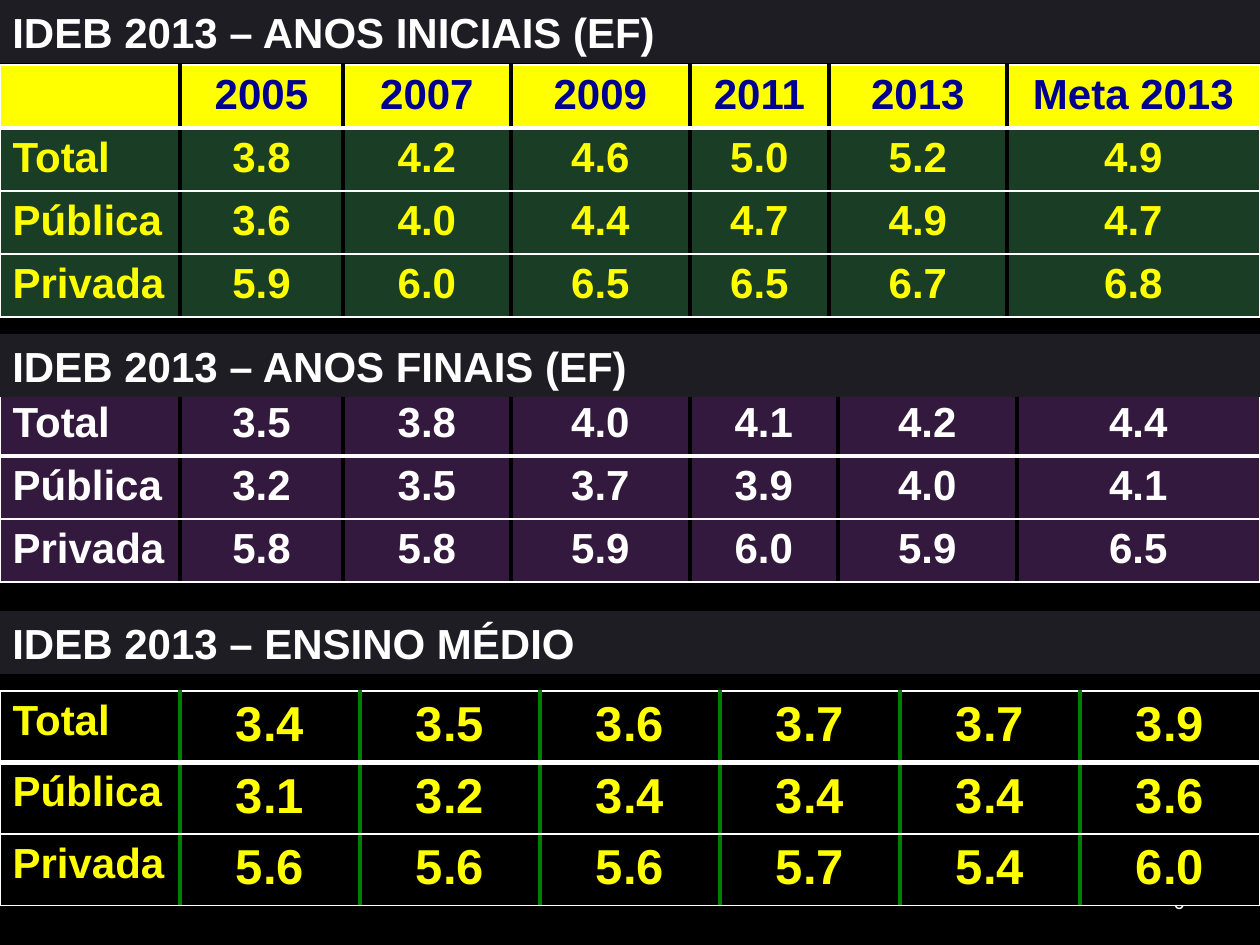
import pptx
import pptx.dml.color
import pptx.enum.shapes
import pptx.enum.text
import pptx.oxml
import pptx.oxml.ns
import pptx.util

RGBColor = pptx.dml.color.RGBColor
PP_ALIGN = pptx.enum.text.PP_ALIGN
ANCHOR = pptx.enum.text.MSO_ANCHOR

BLACK = RGBColor(0x00, 0x00, 0x00)
WHITE = RGBColor(0xFF, 0xFF, 0xFF)
YELLOW = RGBColor(0xFF, 0xFF, 0x00)
NAVY = RGBColor(0x00, 0x00, 0x90)
GREEN = RGBColor(0x00, 0x80, 0x00)
DARK_GREEN = RGBColor(0x1A, 0x3E, 0x25)
PURPLE = RGBColor(0x34, 0x19, 0x3F)
BAR_GREY = RGBColor(0x1F, 0x1D, 0x24)

PX = 914400 // 126
WIDTH, HEIGHT = 1260, 945
BAR_HEIGHT = 63
THIN, THICK = 1, 3

YEARS = ["", "2005", "2007", "2009", "2011", "2013", "Meta 2013"]
INITIAL_YEARS = [
    ["Total", "3.8", "4.2", "4.6", "5.0", "5.2", "4.9"],
    ["Pública", "3.6", "4.0", "4.4", "4.7", "4.9", "4.7"],
    ["Privada", "5.9", "6.0", "6.5", "6.5", "6.7", "6.8"],
]
FINAL_YEARS = [
    ["Total", "3.5", "3.8", "4.0", "4.1", "4.2", "4.4"],
    ["Pública", "3.2", "3.5", "3.7", "3.9", "4.0", "4.1"],
    ["Privada", "5.8", "5.8", "5.9", "6.0", "5.9", "6.5"],
]
HIGH_SCHOOL = [
    ["Total", "3.4", "3.5", "3.6", "3.7", "3.7", "3.9"],
    ["Pública", "3.1", "3.2", "3.4", "3.4", "3.4", "3.6"],
    ["Privada", "5.6", "5.6", "5.6", "5.7", "5.4", "6.0"],
]


def emu(*lengths):
    return [pptx.util.Emu(length * PX) for length in lengths]


def write(frame, text, size, color, align, font="Arial", bold=True):
    frame.text = text
    paragraph = frame.paragraphs[0]
    paragraph.alignment = align
    for run in paragraph.runs:
        run.font.name = font
        run.font.size = pptx.util.Pt(size)
        run.font.bold = bold
        run.font.color.rgb = color


def set_borders(cell, edges):
    """Draw the (colour, points) edges, given as left, right, top, bottom."""
    properties = cell._tc.get_or_add_tcPr()
    for place, (side, (color, points)) in enumerate(zip("LRTB", edges)):
        line = pptx.oxml.parse_xml(
            f'<a:ln{side} {pptx.oxml.ns.nsdecls("a")} w="{pptx.util.Pt(points)}">'
            f'<a:solidFill><a:srgbClr val="{color}"/></a:solidFill></a:ln{side}>'
        )
        properties.insert(place, line)


def add_heading_bar(slide, top, text):
    bar = slide.shapes.add_shape(
        pptx.enum.shapes.MSO_SHAPE.RECTANGLE, *emu(0, top, WIDTH, BAR_HEIGHT)
    )
    bar.shadow.inherit = False
    bar.fill.solid()
    bar.fill.fore_color.rgb = BAR_GREY
    bar.line.fill.background()
    bar.text_frame.vertical_anchor = ANCHOR.TOP
    write(bar.text_frame, text, 24, WHITE, PP_ALIGN.LEFT)


def add_score_table(slide, top, rows, widths, row_height, fill, color,
                    divider=BLACK, score_size=24, has_header=False):
    grid = slide.shapes.add_table(
        len(rows), len(widths), *emu(0, top, sum(widths), row_height * len(rows))
    ).table
    grid.first_row = grid.horz_banding = False
    for column, width in zip(grid.columns, widths):
        column.width = emu(width)[0]

    inner, outer = (divider, THICK), (WHITE, THIN)
    for r, values in enumerate(rows):
        grid.rows[r].height = emu(row_height)[0]
        is_header = has_header and r == 0
        for c, value in enumerate(values):
            cell = grid.cell(r, c)
            cell.fill.solid()
            cell.fill.fore_color.rgb = YELLOW if is_header else fill
            write(
                cell.text_frame, value,
                score_size if c else 24,
                NAVY if is_header else color,
                PP_ALIGN.CENTER if c else PP_ALIGN.LEFT,
            )
            set_borders(cell, [
                inner if c else outer,
                inner if c < len(widths) - 1 else outer,
                (WHITE, THICK if r == 1 else THIN),
                (WHITE, THICK if r == 0 else THIN),
            ])


def add_page_number(slide, left, top, width, height):
    number = slide.shapes.add_textbox(*emu(left, top, width, height)).text_frame
    number.word_wrap = True
    number.vertical_anchor = ANCHOR.MIDDLE
    write(number, "6", 12, WHITE, PP_ALIGN.RIGHT, font="Calibri", bold=False)


def main():
    deck = pptx.Presentation()
    deck.slide_width, deck.slide_height = emu(WIDTH, HEIGHT)
    slide = deck.slides.add_slide(deck.slide_layouts[6])
    slide.background.fill.solid()
    slide.background.fill.fore_color.rgb = BLACK

    add_page_number(slide, 903, 876, 294, 50)

    add_score_table(slide, 65, [YEARS] + INITIAL_YEARS,
                    [180, 163, 168, 179, 139, 178, 253], 63,
                    DARK_GREEN, YELLOW, has_header=True)
    add_heading_bar(slide, 0, "IDEB 2013 – ANOS INICIAIS (EF)")

    add_score_table(slide, 393, FINAL_YEARS,
                    [180, 163, 168, 179, 148, 179, 243], 63, PURPLE, WHITE)
    add_heading_bar(slide, 334, "IDEB 2013 – ANOS FINAIS (EF)")

    add_score_table(slide, 691, HIGH_SCHOOL, [WIDTH // 7] * 7, 71,
                    BLACK, YELLOW, divider=GREEN, score_size=28)
    add_heading_bar(slide, 611, "IDEB 2013 – ENSINO MÉDIO")

    deck.save("out.pptx")


if __name__ == "__main__":
    main()
